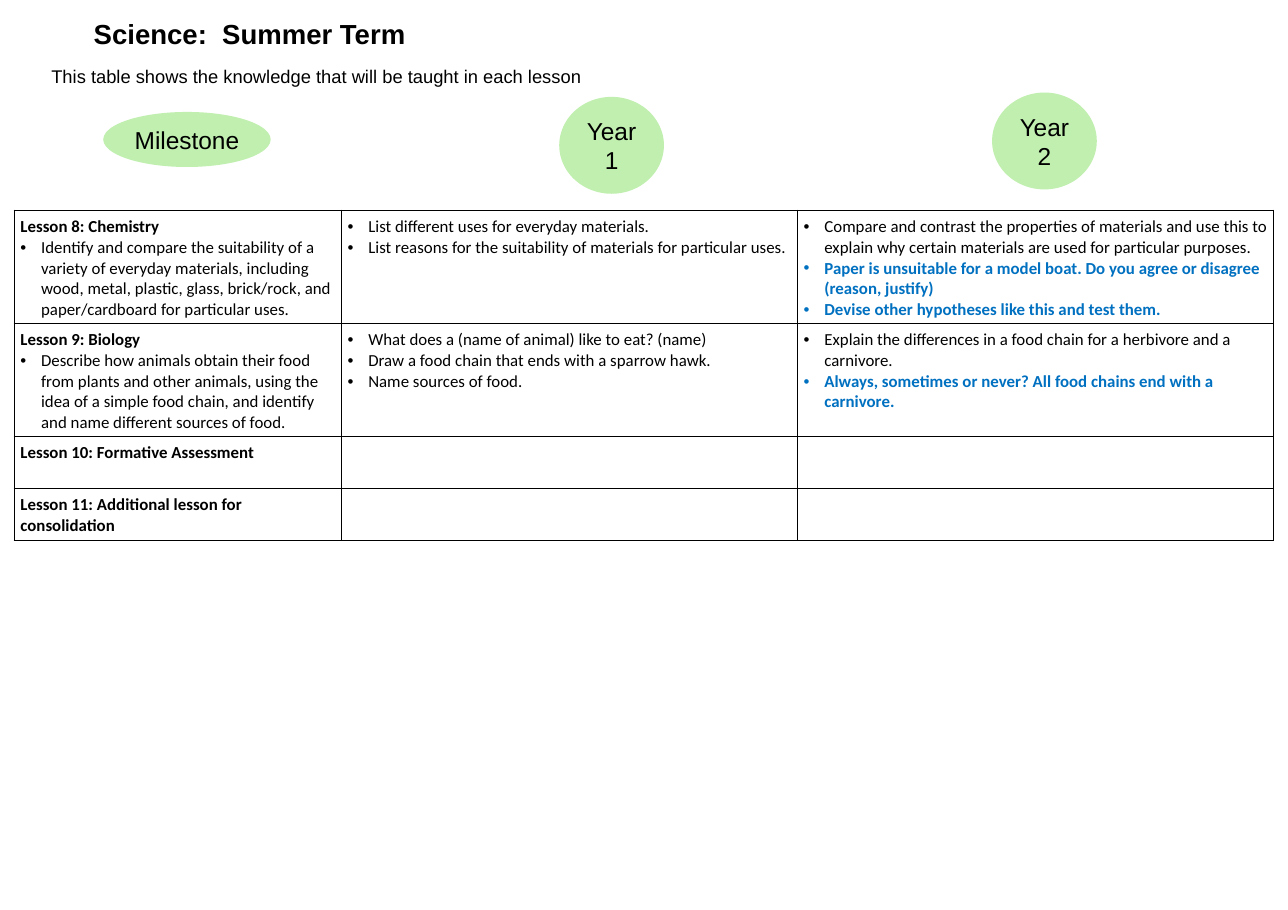
from dataclasses import dataclass

from lxml.etree import SubElement
from pptx import Presentation
from pptx.dml.color import RGBColor
from pptx.enum.shapes import MSO_SHAPE
from pptx.enum.text import MSO_ANCHOR, MSO_AUTO_SIZE, PP_ALIGN
from pptx.oxml.ns import qn
from pptx.util import Inches, Pt


@dataclass(frozen=True)
class Theme:
    ink: str = "000000"
    paper: str = "FFFFFF"
    bubble: str = "C0EFAF"
    challenge: str = "0070C0"
    heading_font: str = "Arial"
    table_font: str = "Calibri"
    title_size: int = 18
    label_size: int = 16
    intro_size: int = 12
    cell_size: int = 11


theme = Theme()
deck = Presentation()
deck.slide_width = Inches(11.69)
deck.slide_height = Inches(8.26)
page = deck.slides.add_slide(deck.slide_layouts[1])


def area(left, top, width, height):
    across, down = deck.slide_width / 100, deck.slide_height / 100
    return [round(value) for value in (left * across, top * down, width * across, height * down)]


def write(frame, text, size, font, color=theme.ink, bold=False, align=PP_ALIGN.LEFT, bullet=False):
    para = frame.paragraphs[0]
    if para.runs:
        para = frame.add_paragraph()
    para.alignment = align
    para.space_before = Pt(0)
    span = para.add_run()
    span.text = text
    span.font.size = Pt(size)
    span.font.name = font
    span.font.bold = bold
    span.font.color.rgb = RGBColor.from_string(color)
    properties = para._p.get_or_add_pPr()
    indent = Pt(13.5) if bullet else 0
    properties.set("marL", str(indent))
    properties.set("indent", str(-indent))
    if bullet:
        SubElement(properties, qn("a:buFont"), typeface="Arial")
        SubElement(properties, qn("a:buChar"), char="•")
    else:
        SubElement(properties, qn("a:buNone"))


title, intro = page.shapes.title, page.placeholders[1]
title.left, title.top, title.width, title.height = area(6.72, 1.33, 25.32, 4.72)
intro.left, intro.top, intro.width, intro.height = area(3.64, 6.66, 89.22, 3.39)
write(title.text_frame, "Science:  Summer Term", theme.title_size, theme.heading_font,
      bold=True, align=PP_ALIGN.CENTER)
write(intro.text_frame, "This table shows the knowledge that will be taught in each lesson",
      theme.intro_size, theme.heading_font)

bubbles = []
for label, left, top, width, height in [
    ("Year 2", 77.03, 10.17, 8.13, 10.65),
    ("Year 1", 43.42, 10.65, 8.13, 10.65),
    ("Milestone", 8.02, 12.3, 13, 6.05),
]:
    bubble = page.shapes.add_shape(MSO_SHAPE.OVAL, *area(left, top, width, height))
    bubble.shadow.inherit = False
    bubble.fill.solid()
    bubble.fill.fore_color.rgb = RGBColor.from_string(theme.bubble)
    bubble.line.fill.background()
    write(bubble.text_frame, label, theme.label_size, theme.heading_font, align=PP_ALIGN.CENTER)
    bubbles.append(bubble)

for box in [title, intro, *bubbles]:
    frame = box.text_frame
    frame.auto_size = MSO_AUTO_SIZE.NONE
    frame.word_wrap = box is not title
    frame.vertical_anchor = MSO_ANCHOR.MIDDLE
    frame.margin_left = frame.margin_right = frame.margin_top = frame.margin_bottom = Inches(0.04)

heading = {"bold": True}
point = {"bullet": True}
challenge = {"bullet": True, "bold": True, "color": theme.challenge}
lessons = [
    [
        [("Lesson 8: Chemistry", heading),
         ("Identify and compare the suitability of a variety of everyday materials, including wood, "
          "metal, plastic, glass, brick/rock, and paper/cardboard for particular uses.", point)],
        [("List different uses for everyday materials.", point),
         ("List reasons for the suitability of materials for particular uses.", point)],
        [("Compare and contrast the properties of materials and use this to explain why certain "
          "materials are used for particular purposes.", point),
         ("Paper is unsuitable for a model boat. Do you agree or disagree (reason, justify)", challenge),
         ("Devise other hypotheses like this and test them.", challenge)],
    ],
    [
        [("Lesson 9: Biology", heading),
         ("Describe how animals obtain their food from plants and other animals, using the idea of a "
          "simple food chain, and identify and name different sources of food.", point)],
        [("What does a (name of animal) like to eat? (name)", point),
         ("Draw a food chain that ends with a sparrow hawk.", point),
         ("Name sources of food.", point)],
        [("Explain the differences in a food chain for a herbivore and a carnivore.", point),
         ("Always, sometimes or never? All food chains end with a carnivore.", challenge)],
    ],
    [[("Lesson 10: Formative Assessment", heading)], [], []],
    [[("Lesson 11: Additional lesson for consolidation", heading)], [], []],
]
column_shares = [25.41, 35.41, 36.97]
row_shares = [12.42, 12.42, 5.72, 5.72]

table = page.shapes.add_table(
    len(row_shares), len(column_shares),
    *area(1.11, 23.1, sum(column_shares), sum(row_shares))).table
table.first_row = table.horz_banding = False
for column, share in zip(table.columns, column_shares):
    column.width = round(deck.slide_width * share / 100)
for row, share, lesson in zip(table.rows, row_shares, lessons):
    row.height = round(deck.slide_height * share / 100)
    for cell, lines in zip(row.cells, lesson):
        cell.margin_left = cell.margin_right = cell.margin_top = Pt(4)
        cell.margin_bottom = Pt(2)
        for side in ("lnL", "lnR", "lnT", "lnB"):
            border = SubElement(cell._tc.get_or_add_tcPr(), qn(f"a:{side}"), w=str(Pt(1)))
            SubElement(SubElement(border, qn("a:solidFill")), qn("a:srgbClr"), val=theme.ink)
        cell.fill.solid()
        cell.fill.fore_color.rgb = RGBColor.from_string(theme.paper)
        for text, look in lines:
            write(cell.text_frame, text, theme.cell_size, theme.table_font, **look)

deck.save("out.pptx")
